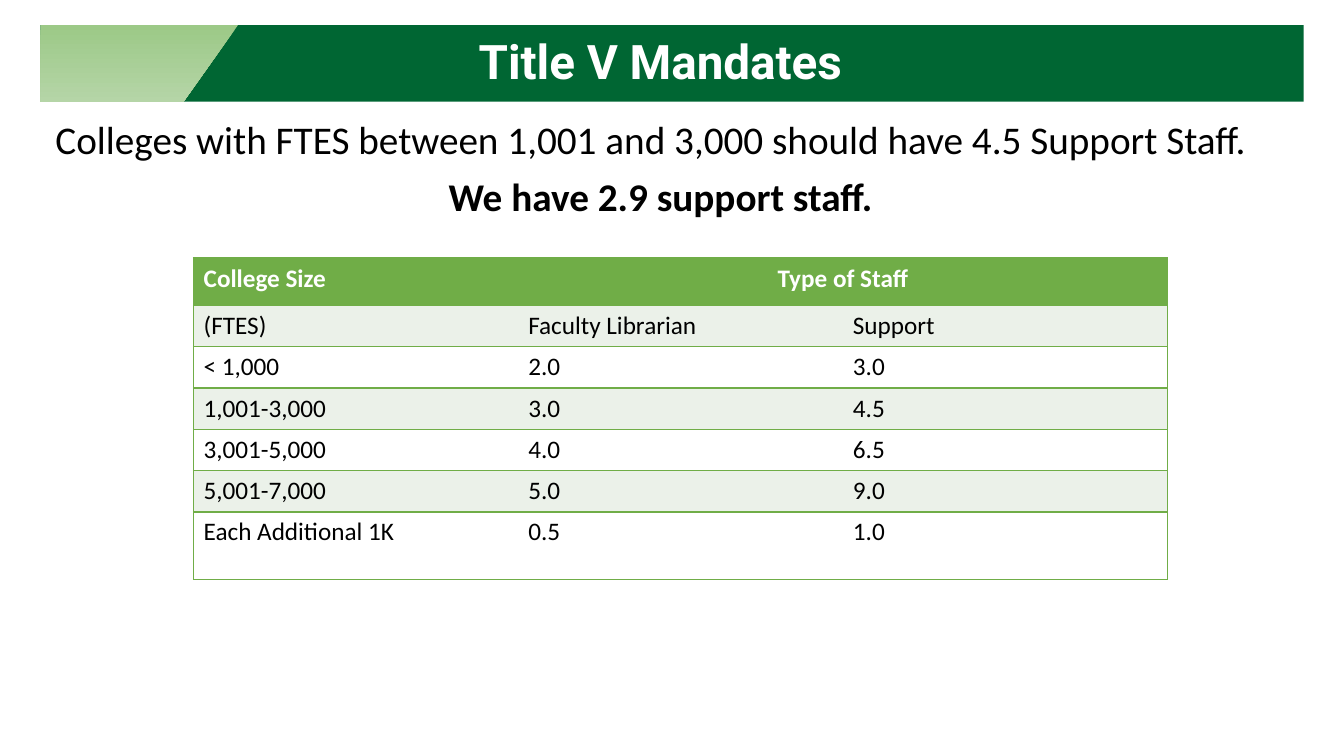
from dataclasses import dataclass

from lxml.etree import SubElement
from pptx import Presentation
from pptx.dml.color import RGBColor
from pptx.enum.shapes import MSO_SHAPE as Preset
from pptx.enum.text import MSO_ANCHOR as Anchor, MSO_AUTO_SIZE as AutoSize, PP_ALIGN as Align
from pptx.oxml.ns import qn
from pptx.util import Inches, Pt

DARK_GREEN = RGBColor(0x00, 0x66, 0x33)
TABLE_GREEN = RGBColor(0x70, 0xAD, 0x47)
BAND_GREEN = RGBColor(0xEB, 0xF1, 0xE9)
ACCENT_TOP = RGBColor(0x9C, 0xC9, 0x87)
ACCENT_BOTTOM = RGBColor(0xB5, 0xD5, 0xA7)
WHITE = RGBColor(0xFF, 0xFF, 0xFF)
BLACK = RGBColor(0x00, 0x00, 0x00)


@dataclass(frozen=True)
class Style:
    size: int
    color: RGBColor = BLACK
    bold: bool = False
    align: Align = Align.LEFT
    font: str = "Calibri"


@dataclass(frozen=True)
class StaffRow:
    height: float
    texts: tuple[str, str, str]


TITLE_STYLE = Style(34, WHITE, True, Align.CENTER, "Roboto")
STATEMENTS = (
    ("Colleges with FTES between 1,001 and 3,000 should have 4.5 Support Staff. ", Style(28)),
    ("We have 2.9 support staff.", Style(28, bold=True, align=Align.CENTER)),
)
STAFF_ROWS = (
    StaffRow(0.47, ("College Size ", "Type of Staff", "")),
    StaffRow(0.41, ("(FTES)", "Faculty Librarian", "Support")),
    StaffRow(0.41, ("< 1,000", "2.0", "3.0")),
    StaffRow(0.41, ("1,001-3,000", "3.0", "4.5")),
    StaffRow(0.41, ("3,001-5,000", "4.0", "6.5")),
    StaffRow(0.41, ("5,001-7,000", "5.0", "9.0")),
    StaffRow(0.67, ("Each Additional 1K", "0.5", "1.0")),
)
COLUMN_WIDTH = 3.22


def place(shape, left: float, top: float, width: float, height: float) -> None:
    shape.left, shape.top = Inches(left), Inches(top)
    shape.width, shape.height = Inches(width), Inches(height)


def write(para, text: str, style: Style) -> None:
    para.alignment = style.align
    span = para.add_run()
    span.text = text
    span.font.name = style.font
    span.font.size = Pt(style.size)
    span.font.bold = style.bold
    span.font.color.rgb = style.color


def draw_banner(page) -> None:
    banner = page.shapes.add_shape(
        Preset.RECTANGLE, Inches(0.4), Inches(0.25), Inches(12.53), Inches(0.76))
    banner.fill.solid()
    banner.fill.fore_color.rgb = DARK_GREEN

    outline = page.shapes.build_freeform(Inches(0.4), Inches(0.25))
    corners = ((2.36, 0.25), (1.82, 1.01), (0.4, 1.01))
    outline.add_line_segments([(Inches(x), Inches(y)) for x, y in corners])
    accent = outline.convert_to_shape()
    accent.fill.gradient()
    accent.fill.gradient_angle = 270
    for stop, color in zip(accent.fill.gradient_stops, (ACCENT_TOP, ACCENT_BOTTOM)):
        stop.color.rgb = color

    for shape in (banner, accent):
        shape.line.fill.background()
        shape.shadow.inherit = False


def write_title(page) -> None:
    title = page.shapes.title
    place(title, 0.8, 0.35, 11.5, 0.58)
    frame = title.text_frame
    frame.auto_size = AutoSize.NONE
    frame.vertical_anchor = Anchor.MIDDLE
    para = frame.paragraphs[0]
    para.line_spacing = 0.9
    write(para, "Title V Mandates", TITLE_STYLE)
    title.element.getparent().append(title.element)


def write_statements(page) -> None:
    body = page.placeholders[1]
    place(body, 0.45, 1.15, 12.2, 1.15)
    frame = body.text_frame
    frame.auto_size = AutoSize.NONE
    for index, (text, style) in enumerate(STATEMENTS):
        para = frame.add_paragraph() if index else frame.paragraphs[0]
        para.line_spacing = 0.9
        para.space_before = Pt(10)
        write(para, text, style)
        properties = para._p.get_or_add_pPr()
        properties.set("marL", str(Inches(0.25)))
        properties.set("indent", str(Inches(-0.25)))
        SubElement(properties, qn("a:buNone"))


def draw_borders(cell, visible: str) -> None:
    properties = cell._tc.get_or_add_tcPr()
    for side in "LRTB":
        line = SubElement(properties, qn(f"a:ln{side}"), w=str(Pt(1)))
        if side in visible:
            fill = SubElement(line, qn("a:solidFill"))
            SubElement(fill, qn("a:srgbClr"), val=str(TABLE_GREEN))
        else:
            SubElement(line, qn("a:noFill"))


def draw_staff_table(page) -> None:
    height = sum(row.height for row in STAFF_ROWS)
    table = page.shapes.add_table(
        len(STAFF_ROWS), 3, Inches(1.92), Inches(2.56),
        Inches(3 * COLUMN_WIDTH), Inches(height)).table
    for column in table.columns:
        column.width = Inches(COLUMN_WIDTH)
    table.cell(0, 1).merge(table.cell(0, 2))
    for r, row in enumerate(STAFF_ROWS):
        table.rows[r].height = Inches(row.height)
        background = TABLE_GREEN if r == 0 else BAND_GREEN if r % 2 else WHITE
        for c, text in enumerate(row.texts):
            cell = table.cell(r, c)
            draw_borders(cell, ("LTB", "TBR" if r == 0 else "TB", "TBR")[c])
            cell.fill.solid()
            cell.fill.fore_color.rgb = background
            if cell.is_spanned:
                continue
            style = Style(18)
            if r == 0:
                style = Style(18, WHITE, True, Align.CENTER if c else Align.LEFT)
            write(cell.text_frame.paragraphs[0], text, style)


def main() -> None:
    deck = Presentation()
    deck.slide_width, deck.slide_height = Inches(13.33), Inches(7.5)
    page = deck.slides.add_slide(deck.slide_layouts[1])
    write_statements(page)
    draw_banner(page)
    write_title(page)
    draw_staff_table(page)
    deck.save("out.pptx")


if __name__ == "__main__":
    main()
